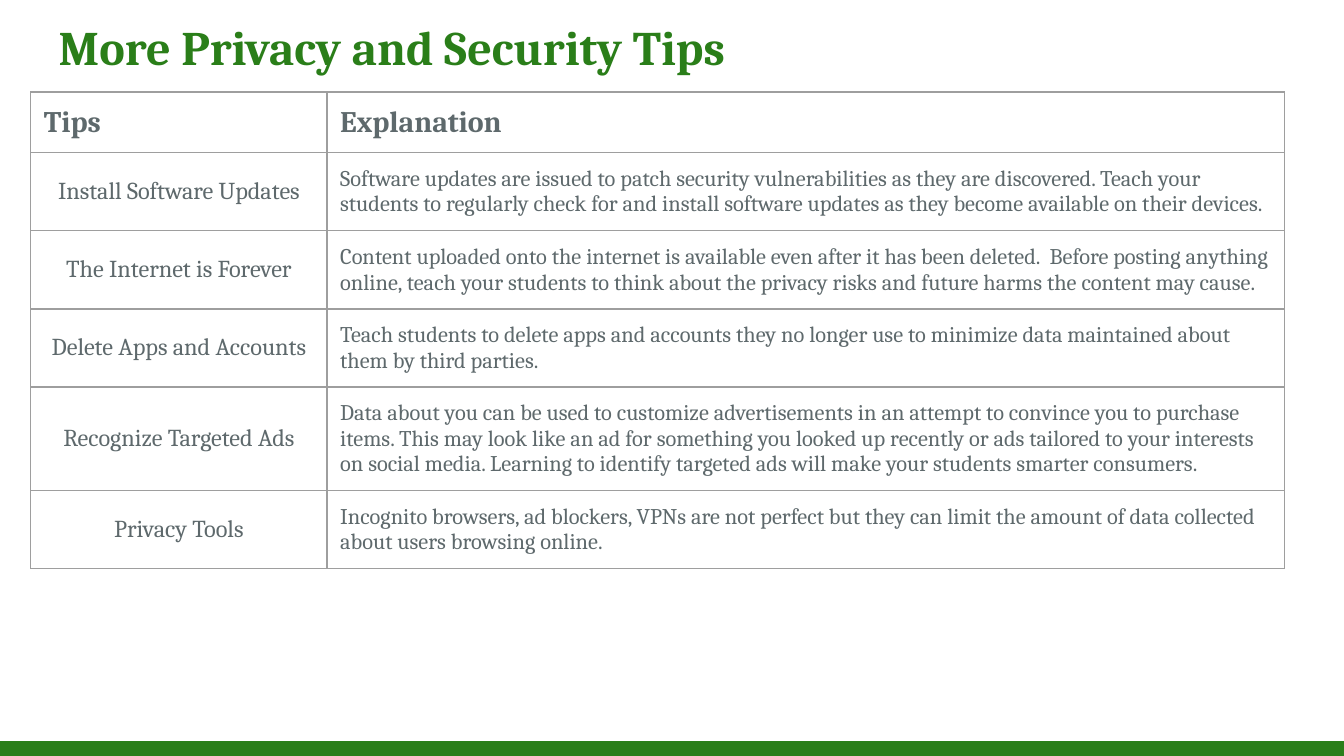
from typing import NamedTuple

from pptx import Presentation
from pptx import util as u
from pptx.dml import color
from pptx.enum import shapes, text
from pptx.oxml import parse_xml
from pptx.oxml import ns

FONT = "Cambria"
GREEN, GRAY, BORDER, WHITE = "2A7E19", "5E696C", "9E9E9E", "FFFFFF"
INSET = u.Cm(0.25)
SLIDE_WIDTH, SLIDE_HEIGHT = u.Cm(25.4), u.Cm(14.29)


class Tip(NamedTuple):
    name: str
    explanation: str


TIPS = [
    Tip("Install Software Updates",
        "Software updates are issued to patch security vulnerabilities as they are "
        "discovered. Teach your students to regularly check for and install software "
        "updates as they become available on their devices."),
    Tip("The Internet is Forever",
        "Content uploaded onto the internet is available even after it has been "
        "deleted.  Before posting anything online, teach your students to think about "
        "the privacy risks and future harms the content may cause."),
    Tip("Delete Apps and Accounts",
        "Teach students to delete apps and accounts they no longer use to minimize "
        "data maintained about them by third parties."),
    Tip("Recognize Targeted Ads",
        "Data about you can be used to customize advertisements in an attempt to "
        "convince you to purchase items. This may look like an ad for something you "
        "looked up recently or ads tailored to your interests on social media. "
        "Learning to identify targeted ads will make your students smarter consumers."),
    Tip("Privacy Tools",
        "Incognito browsers, ad blockers, VPNs are not perfect but they can limit the "
        "amount of data collected about users browsing online."),
]


def set_color(target, value: str) -> None:
    """Apply a hex color to a fill or a font."""
    if hasattr(target, "solid"):
        target.solid()
        target.fore_color.rgb = color.RGBColor.from_string(value)
    else:
        target.color.rgb = color.RGBColor.from_string(value)


def write(frame, words: str, size: float, value: str, bold: bool = False,
          align=text.PP_ALIGN.LEFT) -> None:
    frame.text = words
    frame.word_wrap = True
    paragraph = frame.paragraphs[0]
    paragraph.alignment = align
    font = paragraph.font
    font.name, font.size, font.bold = FONT, u.Pt(size), bold
    set_color(font, value)


def set_margins(target) -> None:
    for side in ("left", "right", "top", "bottom"):
        setattr(target, f"margin_{side}", INSET)


def add_borders(cell) -> None:
    properties = cell._tc.get_or_add_tcPr()
    for index, side in enumerate(("lnL", "lnR", "lnT", "lnB")):
        line = parse_xml(
            f'<a:{side} {ns.nsdecls("a")} w="{u.Pt(0.75)}"><a:solidFill>'
            f'<a:srgbClr val="{BORDER}"/></a:solidFill></a:{side}>')
        properties.insert(index, line)


def fill_cell(cell, words: str, size: float, bold: bool = False,
              centered: bool = False) -> None:
    align = text.PP_ALIGN.CENTER if centered else text.PP_ALIGN.LEFT
    write(cell.text_frame, words, size, GRAY, bold, align)
    cell.vertical_anchor = text.MSO_ANCHOR.MIDDLE if centered else text.MSO_ANCHOR.TOP
    set_margins(cell)
    set_color(cell.fill, WHITE)
    add_borders(cell)


def add_tips_table(slide, tips: list[Tip]) -> None:
    row_count = len(tips) + 1
    table = slide.shapes.add_table(
        row_count, 2, u.Cm(0.58), u.Cm(1.74), u.Cm(23.69), u.Cm(1.07) * row_count).table
    table.first_row = table.horz_banding = False
    table.columns[0].width, table.columns[1].width = u.Cm(5.6), u.Cm(18.09)

    for column, heading in enumerate(("Tips", "Explanation")):
        fill_cell(table.cell(0, column), heading, 16, bold=True)
    for row, tip in enumerate(tips, start=1):
        fill_cell(table.cell(row, 0), tip.name, 13, centered=True)
        fill_cell(table.cell(row, 1), tip.explanation, 12)


def main() -> None:
    presentation = Presentation()
    presentation.slide_width, presentation.slide_height = SLIDE_WIDTH, SLIDE_HEIGHT
    slide = presentation.slides.add_slide(presentation.slide_layouts[5])
    set_color(slide.background.fill, WHITE)

    # Title
    title = slide.shapes.title
    title.left, title.top = u.Cm(0.86), u.Cm(0)
    title.width, title.height = u.Cm(23.67), u.Cm(1.73)
    frame = title.text_frame
    write(frame, "More Privacy and Security Tips", 25.8, GREEN, bold=True)
    set_margins(frame)
    frame.auto_size = text.MSO_AUTO_SIZE.NONE
    frame.vertical_anchor = text.MSO_ANCHOR.MIDDLE

    # Footer band
    band_height = u.Cm(0.28)
    band = slide.shapes.add_shape(
        shapes.MSO_SHAPE.RECTANGLE, 0, SLIDE_HEIGHT - band_height, SLIDE_WIDTH, band_height)
    band.shadow.inherit = False
    set_color(band.fill, GREEN)
    band.line.fill.background()

    # Tips and explanations
    add_tips_table(slide, TIPS)

    presentation.save("out.pptx")


if __name__ == "__main__":
    main()
